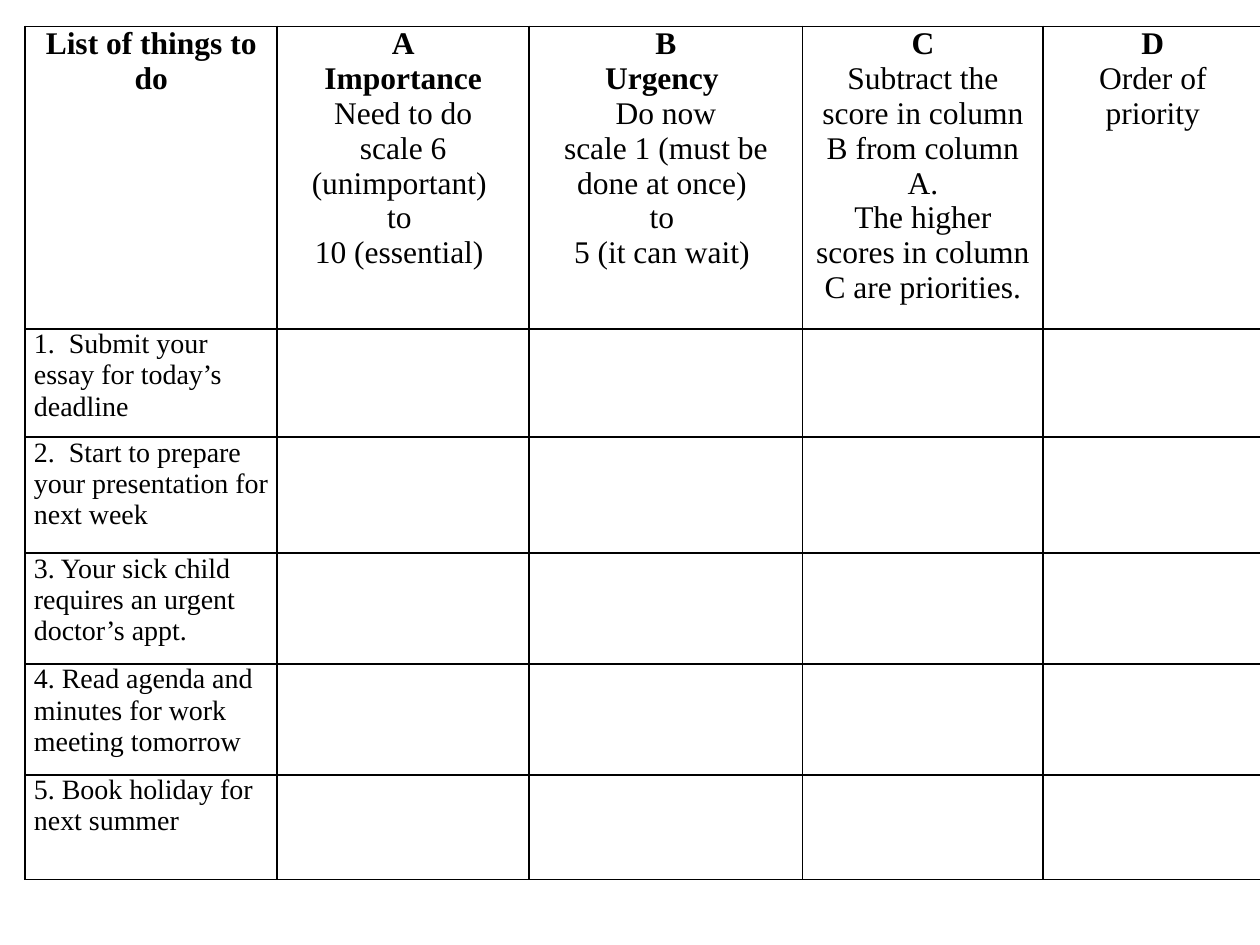
from lxml.etree import SubElement
from pptx import Presentation
from pptx.dml.color import RGBColor
from pptx.enum.text import PP_ALIGN
from pptx.oxml.ns import qn
from pptx.util import Inches, Pt

INK = "000000"
PAPER = "FFFFFF"
FONT = "Times New Roman"
COLUMN_WIDTHS = [2, 2, 2.17, 1.91, 1.74]
ROW_HEIGHTS = [2.4, 0.86, 0.92, 0.88, 0.88, 0.83]

# Each heading is its bold lines followed by its plain lines.
HEADINGS = [
    (["List of things to do"], []),
    (["A", "Importance"],
     ["Need to do", "scale 6 (unimportant) ", "to ", "10 (essential) "]),
    (["B", "Urgency "],
     ["Do now", "scale 1 (must be done at once) ", "to ", "5 (it can wait) "]),
    (["C"],
     ["Subtract the score in column B from column A.",
      "The higher scores in column C are priorities."]),
    (["D"], ["Order of priority"]),
]
TASKS = [
    "1.  Submit your essay for today’s deadline",
    "2.  Start to prepare your presentation for next week",
    "3. Your sick child requires an urgent doctor’s appt.",
    "4. Read agenda and minutes for work meeting tomorrow",
    "5. Book holiday for next summer",
]


def color(hex_code):
    """Return the colour for a hex string."""
    return RGBColor.from_string(hex_code)


def add_borders(cell):
    """Draw a thin line on all four sides of a cell."""
    properties = cell._tc.get_or_add_tcPr()
    for position, side in enumerate(("a:lnL", "a:lnR", "a:lnT", "a:lnB")):
        border = SubElement(properties, qn(side), w=str(Pt(1)))
        fill = SubElement(border, qn("a:solidFill"))
        SubElement(fill, qn("a:srgbClr"), val=INK)
        properties.insert(position, border)


def style_cell(cell):
    """Give a cell its margins, fill and borders."""
    cell.margin_left = cell.margin_right = Inches(0.07)
    cell.margin_top = cell.margin_bottom = 0
    cell.fill.solid()
    cell.fill.fore_color.rgb = color(PAPER)
    add_borders(cell)


def write_cell(cell, lines, size, bold_count=0, align=PP_ALIGN.LEFT):
    """Write lines into a cell, the first bold_count of them in bold."""
    cell.text_frame.text = "\n".join(lines)
    for index, paragraph in enumerate(cell.text_frame.paragraphs):
        paragraph.alignment = align
        for run in paragraph.runs:
            run.font.name = FONT
            run.font.size = Pt(size)
            run.font.bold = index < bold_count
            run.font.color.rgb = color(INK)


def add_priority_table(slide):
    """Add the empty, styled priority grid and return it."""
    table = slide.shapes.add_table(
        len(ROW_HEIGHTS), len(COLUMN_WIDTHS), Inches(0.2), Inches(0.21),
        Inches(sum(COLUMN_WIDTHS)), Inches(sum(ROW_HEIGHTS))).table
    table.first_row = False
    table.horz_banding = False
    for column, width in zip(table.columns, COLUMN_WIDTHS):
        column.width = Inches(width)
    for row, height in zip(table.rows, ROW_HEIGHTS):
        row.height = Inches(height)
    for cell in table.iter_cells():
        style_cell(cell)
    return table


def main():
    """Build the prioritising slide and save it."""
    presentation = Presentation()
    presentation.slide_width = Inches(10)
    presentation.slide_height = Inches(7.5)
    slide = presentation.slides.add_slide(presentation.slide_layouts[6])
    priorities = add_priority_table(slide)
    for column, (titles, details) in enumerate(HEADINGS):
        write_cell(priorities.cell(0, column), titles + details, 18,
                   len(titles), PP_ALIGN.CENTER)
    for row, task in enumerate(TASKS, start=1):
        write_cell(priorities.cell(row, 0), [task], 16)
    presentation.save("out.pptx")


if __name__ == "__main__":
    main()
